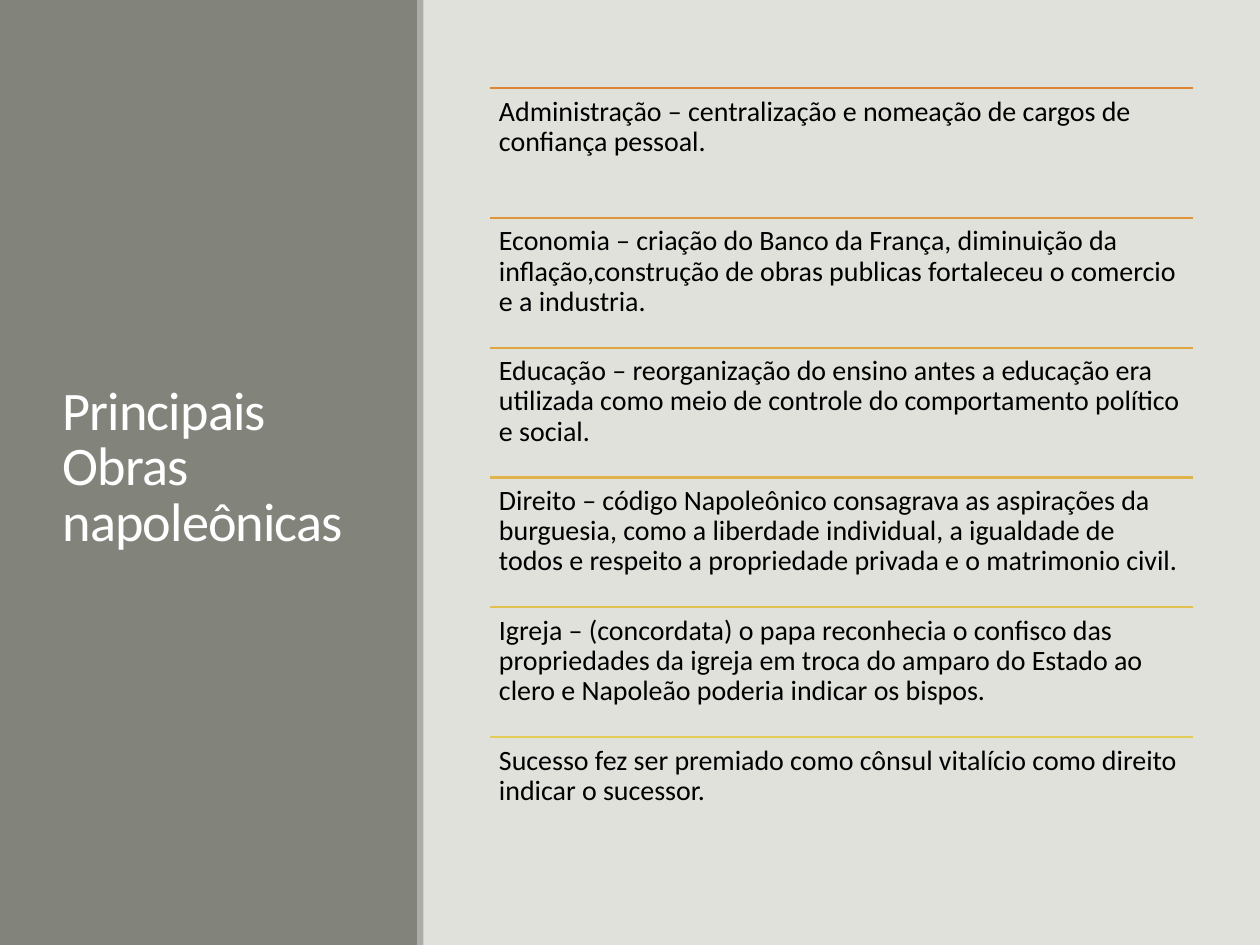
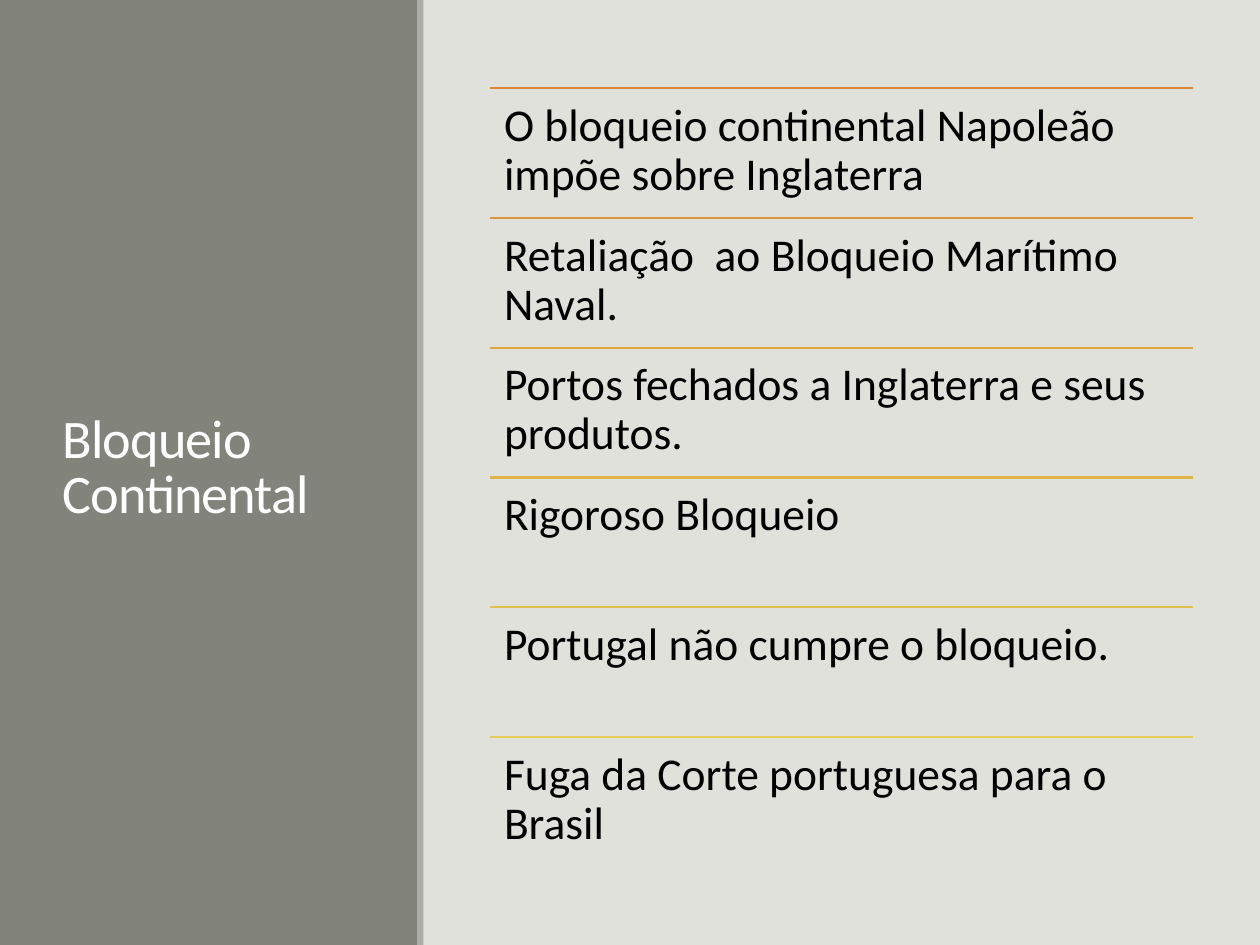
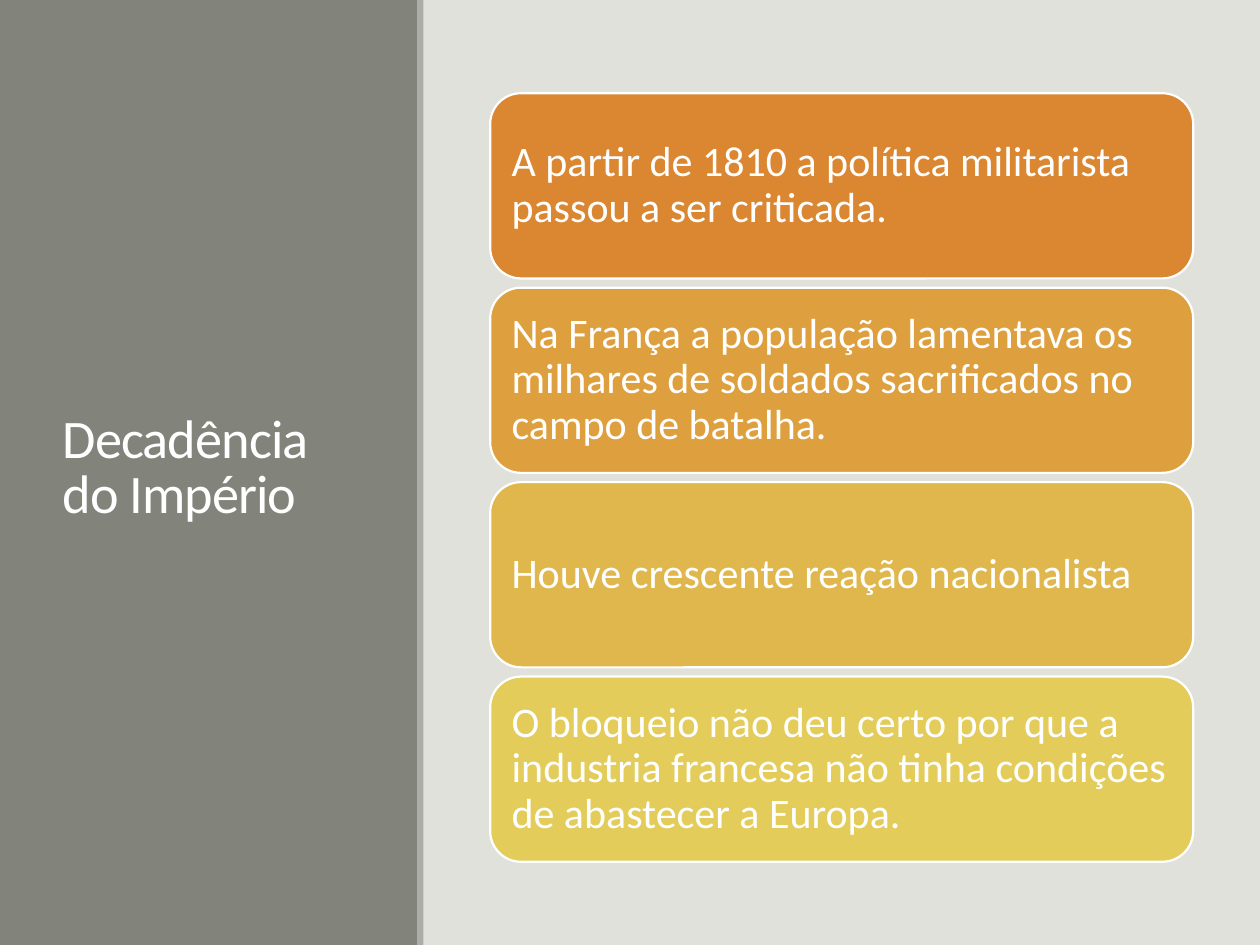
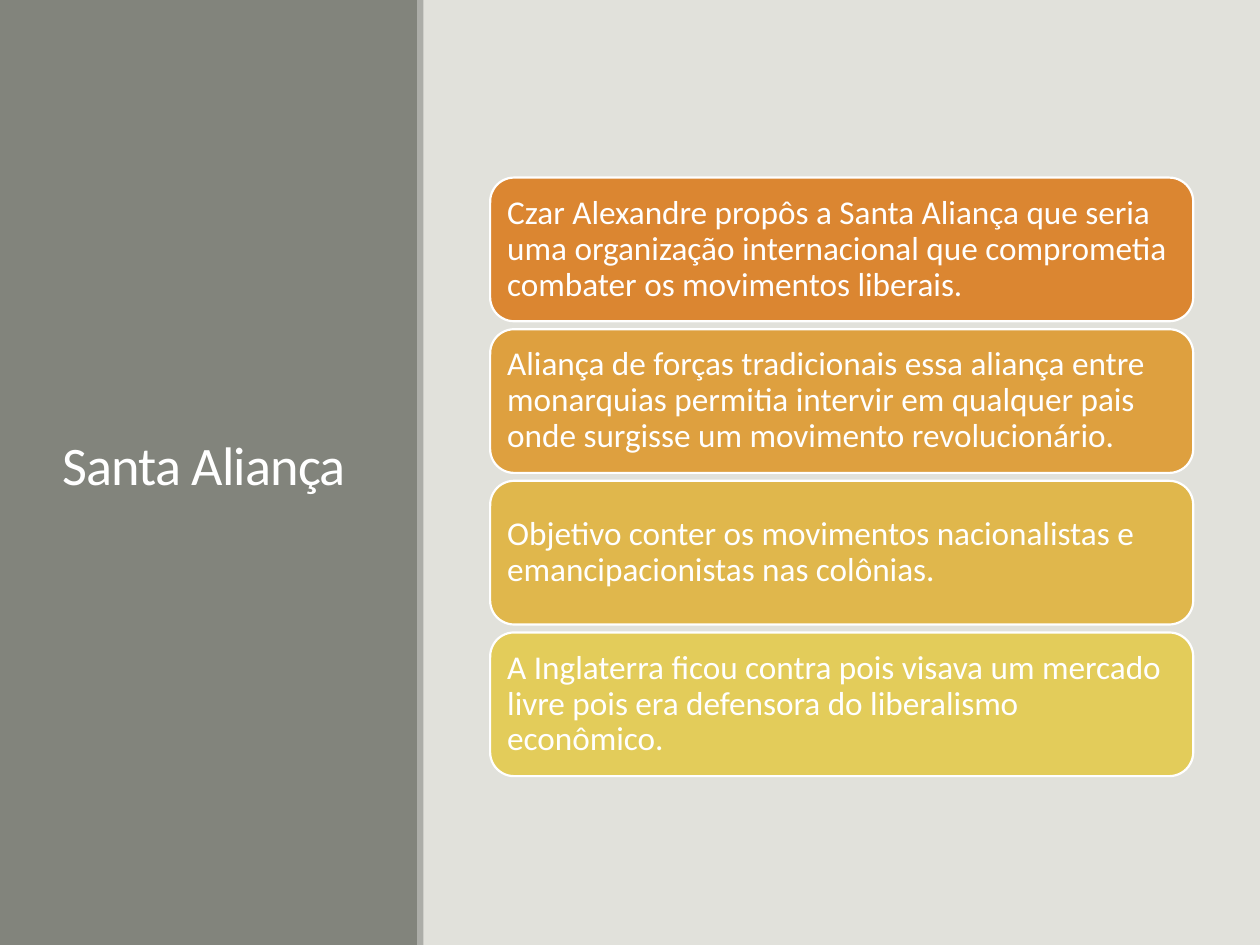
from lxml import etree
from pptx import Presentation
from pptx.dml.color import RGBColor
from pptx.enum.shapes import MSO_CONNECTOR, MSO_SHAPE
from pptx.enum.text import MSO_ANCHOR, PP_ALIGN
from pptx.oxml.ns import qn
from pptx.util import Pt

PX = 9144
WIDE, HIGH = 1000, 750
LEFT, SPAN = 389, 558
ROW = 103

RECT, ROUND = MSO_SHAPE.RECTANGLE, MSO_SHAPE.ROUNDED_RECTANGLE
LINE = MSO_CONNECTOR.STRAIGHT
TOP, MID = MSO_ANCHOR.TOP, MSO_ANCHOR.MIDDLE
START = PP_ALIGN.LEFT

FONT = "Calibri"
PALE = RGBColor(0xE1, 0xE1, 0xDB)
GRAY = RGBColor(0x82, 0x84, 0x7C)
EDGE = RGBColor(0xAC, 0xAD, 0xA8)
WHITE = RGBColor(0xFF, 0xFF, 0xFF)
BLACK = RGBColor(0x00, 0x00, 0x00)
ORANGE = RGBColor(0xDB, 0x86, 0x31)
YELLOW = RGBColor(0xE3, 0xCC, 0x5A)
RULES = [
    ORANGE,
    RGBColor(0xDD, 0x96, 0x39),
    RGBColor(0xDE, 0xA5, 0x41),
    RGBColor(0xE0, 0xB3, 0x4A),
    RGBColor(0xE1, 0xC0, 0x52),
    YELLOW,
]
FILLS = [ORANGE, RGBColor(0xDE, 0xA0, 0x3F), RGBColor(0xE0, 0xB7, 0x4C), YELLOW]

WORKS = [
    "Administração – centralização e nomeação de cargos de confiança pessoal.",
    "Economia – criação do Banco da França, diminuição da inflação,construção "
    "de obras publicas fortaleceu o comercio e a industria.",
    "Educação – reorganização do ensino antes a educação era utilizada como "
    "meio de controle do comportamento político e social.",
    "Direito – código Napoleônico consagrava as aspirações da burguesia, como a "
    "liberdade individual, a igualdade de todos e respeito a propriedade privada "
    "e o matrimonio civil.",
    "Igreja – (concordata) o papa reconhecia o confisco das propriedades da "
    "igreja em troca do amparo do Estado ao clero e Napoleão poderia indicar os "
    "bispos.",
    "Sucesso fez ser premiado como cônsul vitalício como direito indicar o "
    "sucessor.",
]
BLOCKADE = [
    "O bloqueio continental Napoleão impõe sobre Inglaterra",
    "Retaliação  ao Bloqueio Marítimo Naval.",
    "Portos fechados a Inglaterra e seus produtos.",
    "Rigoroso Bloqueio",
    "Portugal não cumpre o bloqueio.",
    "Fuga da Corte portuguesa para o Brasil",
]
DECLINE = [
    "A partir de 1810 a política militarista passou a ser criticada.",
    "Na França a população lamentava os milhares de soldados sacrificados no "
    "campo de batalha.",
    "Houve crescente reação nacionalista",
    "O bloqueio não deu certo por que a industria francesa não tinha condições "
    "de abastecer a Europa.",
]
PACT = [
    "Czar Alexandre propôs a Santa Aliança que seria uma organização "
    "internacional que comprometia combater os movimentos liberais.",
    "Aliança de forças tradicionais essa aliança entre monarquias permitia "
    "intervir em qualquer pais onde surgisse um movimento revolucionário.",
    "Objetivo conter os movimentos nacionalistas e emancipacionistas nas "
    "colônias.",
    "A Inglaterra ficou contra pois visava um mercado livre pois era defensora "
    "do liberalismo econômico.",
]


def emu(*sizes):
    return [round(size * PX) for size in sizes]


class Deck:
    def __init__(self):
        self.prs = Presentation()
        self.prs.slide_width, self.prs.slide_height = emu(WIDE, HIGH)
        self.slide = None

    def page(self, title):
        self.slide = self.prs.slides.add_slide(self.prs.slide_layouts[6])
        back = self.slide.background.fill
        back.solid()
        back.fore_color.rgb = PALE
        self.shape(RECT, (0, 0, 332, HIGH), GRAY)
        head = self.label((40, 57, 253, 631), title, 31, WHITE, 10, MID, 0.85)
        head.runs[0].font._element.set("spc", "-50")
        self.shape(RECT, (331, 0, 5, HIGH), EDGE)

    def shape(self, kind, box, fill, line=None):
        shape = self.slide.shapes.add_shape(kind, *emu(*box))
        shape.shadow.inherit = False
        shape.fill.solid()
        shape.fill.fore_color.rgb = fill
        if line is None:
            shape.line.fill.background()
        else:
            shape.line.color.rgb = line
            shape.line.width = Pt(1.25)
        return shape

    def words(self, shape, text, size, color, inset, anchor, lead=0.9):
        frame = shape.text_frame
        frame.word_wrap = True
        frame.vertical_anchor = anchor
        (frame.margin_left, frame.margin_right,
         frame.margin_top, frame.margin_bottom) = emu(*[inset] * 4)
        par = frame.paragraphs[0]
        par.text = text
        par.alignment = START
        par.line_spacing = lead
        par.font.name = FONT
        par.font.size = Pt(size)
        par.font.color.rgb = color
        return par

    def label(self, box, *style):
        return self.words(self.slide.shapes.add_textbox(*emu(*box)), *style)

    def rule(self, top, color):
        line = self.slide.shapes.add_connector(
            LINE, *emu(LEFT, top, LEFT + SPAN, top))
        line.line.color.rgb = color
        line.line.width = Pt(1.25)
        etree.SubElement(line._element.spPr, qn("a:effectLst"))

    def rows(self, texts, size, inset):
        for i, (text, color) in enumerate(zip(texts, RULES)):
            top = 70 + i * ROW
            self.rule(top, color)
            self.label((LEFT, top, SPAN, ROW), text, size, BLACK, inset, TOP)

    def cards(self, texts, top, last, high, size, inset):
        step = (last - top) / (len(texts) - 1)
        for i, (text, fill) in enumerate(zip(texts, FILLS)):
            box = LEFT, top + i * step, SPAN, high
            card = self.shape(ROUND, box, fill, WHITE)
            self.words(card, text, size, WHITE, inset, MID)


def main():
    deck = Deck()
    deck.page("Principais Obras napoleônicas")
    deck.rows(WORKS, 16, 7)
    deck.page("Bloqueio Continental")
    deck.rows(BLOCKADE, 26, 11)
    deck.page("Decadência do Império")
    deck.cards(DECLINE, 74, 537, 147, 24, 10)
    deck.page("Santa Aliança")
    deck.cards(PACT, 141, 502, 114, 19, 8)
    deck.prs.save("out.pptx")


if __name__ == "__main__":
    main()
